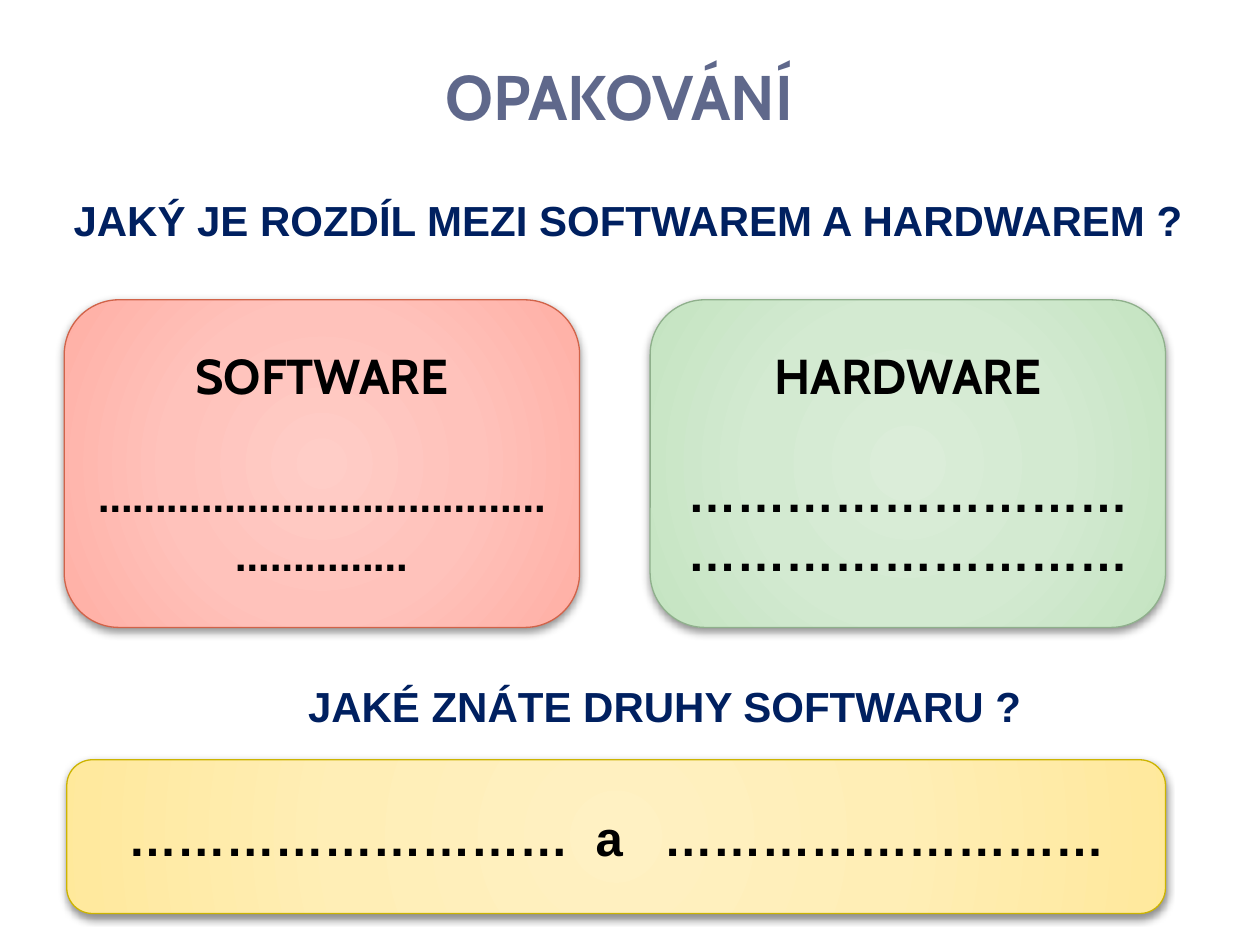
from lxml import etree
from pptx import Presentation
from pptx.dml.color import RGBColor
from pptx.enum import shapes, text
from pptx.oxml import parse_xml
from pptx.oxml.ns import nsdecls, qn
from pptx.util import Inches, Pt

COLORS = {"title": "5F688B", "question": "002060", "answer": "000000", "shadow": "000000"}
DOTS = "…" * 9
STOPS = (0, 50, 97, 100)


def format_span(span, size, font, color):
    span.font.size = Pt(size)
    span.font.name = font
    span.font.bold = True
    span.font.color.rgb = RGBColor.from_string(COLORS[color])


def add_card(page, bounds, gradient, outline):
    """Rounded card with a radial gradient and a soft shadow below it."""
    box = page.shapes.add_shape(shapes.MSO_SHAPE.ROUNDED_RECTANGLE, *map(Inches, bounds))
    box.line.color.rgb = RGBColor.from_string(outline)
    box.line.width = Pt(0.75)
    box.shadow.inherit = False
    stops = "".join(
        f'<a:gs pos="{stop * 1000}"><a:srgbClr val="{color}"/></a:gs>'
        for stop, color in zip(STOPS, gradient)
    )
    fill = parse_xml(
        f'<a:gradFill {nsdecls("a")} rotWithShape="1"><a:gsLst>{stops}</a:gsLst>'
        '<a:path path="circle"><a:fillToRect l="50000" t="50000" r="50000" b="50000"/>'
        "</a:path></a:gradFill>"
    )
    properties = box._element.spPr
    properties.find(qn("a:prstGeom")).addnext(fill)
    shadow = etree.SubElement(
        properties.find(qn("a:effectLst")), qn("a:outerShdw"),
        blurRad=str(Pt(5)), dist=str(Pt(2)), dir="5400000", rotWithShape="0",
    )
    shade = etree.SubElement(shadow, qn("a:srgbClr"), val=COLORS["shadow"])
    etree.SubElement(shade, qn("a:alpha"), val="43000")
    box.text_frame.word_wrap = True
    box.text_frame.vertical_anchor = text.MSO_ANCHOR.MIDDLE
    return box


deck = Presentation()
deck.slide_width, deck.slide_height = Inches(10), Inches(7.5)
page = deck.slides.add_slide(deck.slide_layouts[5])

# Title and questions
headings = [
    ("OPAKOVÁNÍ", 0.35, 0.43, 9.13, 36, "Cabin", "title"),
    ("JAKÝ JE ROZDÍL MEZI SOFTWAREM A HARDWAREM ?", 0.2, 1.31, 9.57, 24, "Arial", "question"),
    ("JAKÉ ZNÁTE DRUHY SOFTWARU ?", 0.49, 5.17, 9.57, 24, "Arial", "question"),
]
for wording, left, top, width, size, font, color in headings:
    bounds = [Inches(value) for value in (left, top, width, 0.68)]
    if color == "title":
        box = page.shapes.title
        box.left, box.top, box.width, box.height = bounds
    else:
        box = page.shapes.add_textbox(*bounds)
    frame = box.text_frame
    frame.text = wording
    frame.word_wrap = True
    frame.auto_size = text.MSO_AUTO_SIZE.NONE
    frame.vertical_anchor = text.MSO_ANCHOR.BOTTOM
    para = frame.paragraphs[0]
    para.alignment = text.PP_ALIGN.CENTER
    para.line_spacing = Pt(20)
    format_span(para.runs[0], size, font, color)

# Software and hardware cards
cards = [
    ("SOFTWARE", 0.51, ("FFCDC7", "FFC2BB", "FFB0A6", "FFAAA0"), "D16349", "Cabin"),
    ("HARDWARE", 5.16, ("DBEDD9", "D3EAD1", "C5E4C2", "C0E4BD"), "8FB08C", "Arial"),
]
for name, left, gradient, outline, dots_font in cards:
    box = add_card(page, (left, 2.38, 4.09, 2.6), gradient, outline)
    box.text_frame.text = f"{name}\n{DOTS * 2}"
    for para, font in zip(box.text_frame.paragraphs, ("Cabin", dots_font)):
        para.alignment = text.PP_ALIGN.CENTER
        format_span(para.runs[0], 28, font, "answer")
    para.space_before = Pt(34)

# Kinds of software, with widened spaces around the conjunction
box = add_card(page, (0.53, 6.03, 8.72, 1.22), ("FFF1C3", "FFEEB6", "FFE99E", "FFE898"), "CCB400")
para = box.text_frame.paragraphs[0]
para.alignment = text.PP_ALIGN.CENTER
for wording, spacing in ((DOTS, 0), (" ", 7.8), ("a", 0), (" ", 15.6), (DOTS, 0)):
    span = para.add_run()
    span.text = wording
    format_span(span, 28, "Arial", "answer")
    if spacing:
        span._r.get_or_add_rPr().set("spc", str(round(spacing * 100)))

deck.save("out.pptx")
